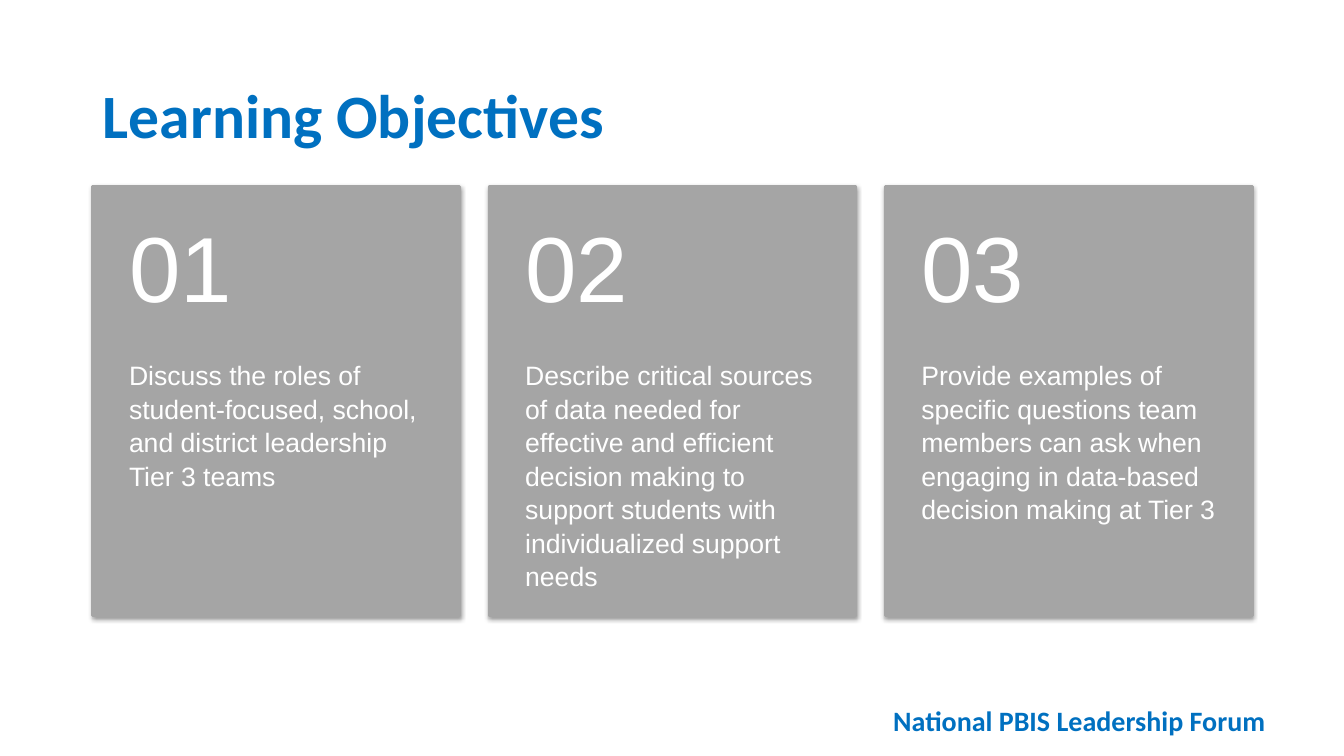
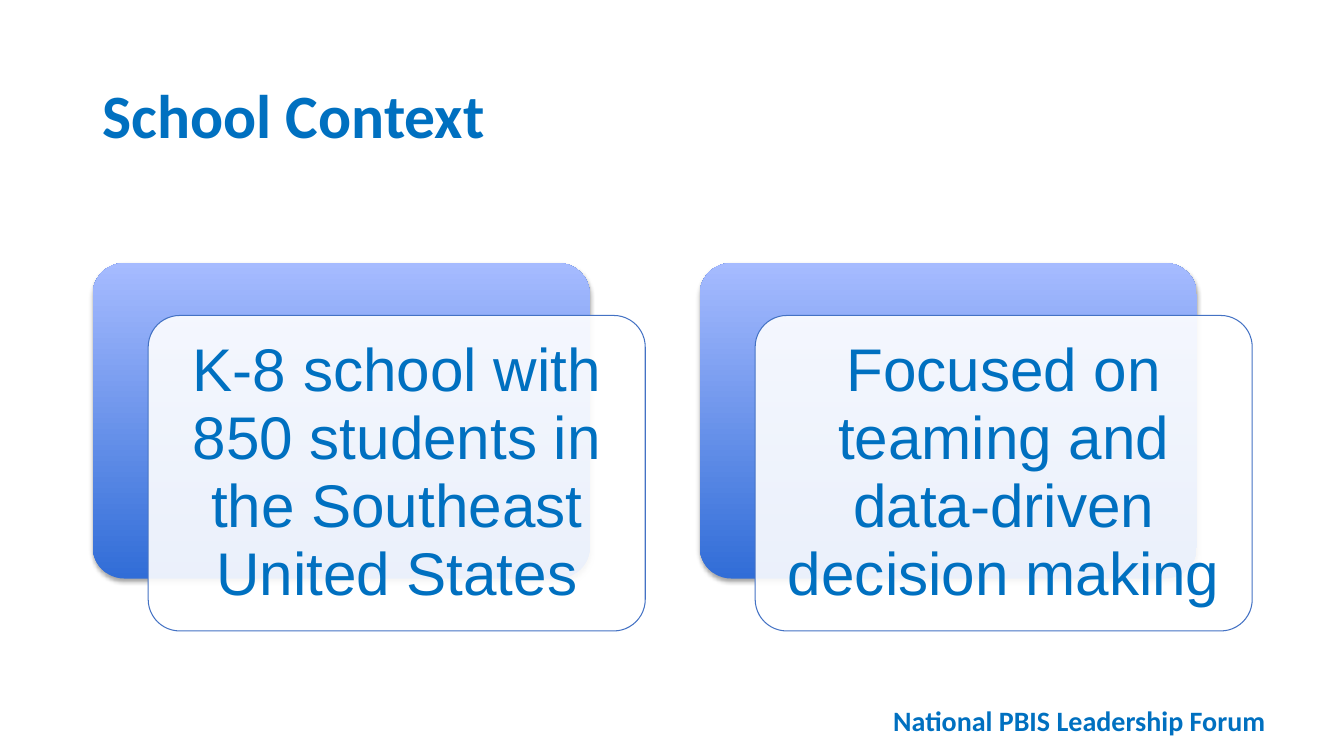
from lxml import etree
from pptx import Presentation, util as u
from pptx.dml.color import RGBColor
from pptx.enum import shapes, text
from pptx.oxml.ns import qn

COLORS = {"blue": "0070C0", "gray": "A5A5A5", "white": "FFFFFF",
          "outline": "4472C4", "deep": "316DD7", "pale": "A6BBFF"}

deck = Presentation()
deck.slide_width, deck.slide_height = u.Inches(13.33), u.Inches(7.5)
layout = deck.slide_layouts[5]

# Shared grid, in inches
LEFT, WIDTH = 0.92, 11.5
TITLE_TOP, TITLE_HEIGHT = 0.4, 1.45


def write(shape, words, size, color="blue", font="Arial", bold=False, align="LEFT",
          anchor="TOP", spacing=1.0, insets=(0.1, 0.05, 0.1, 0.05)):
    """Fill a shape with one formatted paragraph."""
    frame = shape.text_frame
    frame.word_wrap, frame.auto_size = True, text.MSO_AUTO_SIZE.NONE
    frame.vertical_anchor = text.MSO_ANCHOR[anchor]
    (frame.margin_left, frame.margin_top,
     frame.margin_right, frame.margin_bottom) = map(u.Inches, insets)
    frame.text = words
    paragraph = frame.paragraphs[0]
    paragraph.alignment, paragraph.line_spacing = text.PP_ALIGN[align], spacing
    style = paragraph.runs[0].font
    style.name, style.size, style.bold = font, u.Pt(size), bold
    style.color.rgb = RGBColor.from_string(COLORS[color])


def cast_shadow(shape, opacity, distance):
    """Add a soft black shadow below a shape."""
    shape.shadow.inherit = False
    effects = shape._element.spPr.find(qn("a:effectLst"))
    shadow = etree.SubElement(effects, qn("a:outerShdw"), blurRad=str(u.Pt(3.1)),
                              dist=str(u.Pt(distance)), dir="5400000", rotWithShape="0")
    black = etree.SubElement(shadow, qn("a:srgbClr"), val="000000")
    etree.SubElement(black, qn("a:alpha"), val=str(opacity * 1000))


# Slides and titles
slides = []
for heading in ("Learning Objectives", "School Context"):
    slide = deck.slides.add_slide(layout)
    title = slide.shapes.title
    title.left, title.top = u.Inches(LEFT), u.Inches(TITLE_TOP)
    title.width, title.height = u.Inches(WIDTH), u.Inches(TITLE_HEIGHT)
    write(title, heading, 44, font="Calibri", bold=True, anchor="MIDDLE")
    slides.append(slide)
objectives_slide, context_slide = slides

# Footer, moved to the layout so that every slide shows it
footer = objectives_slide.shapes.add_textbox(*map(u.Inches, (8.38, 6.93, 4.65, 0.44)))
write(footer, "National PBIS Leadership Forum", 20, font="Calibri", bold=True, align="CENTER")
layout.shapes.element.append(footer._element)

# Learning objectives: three numbered cards
objectives = (
    "Discuss the roles of student-focused, school, and district leadership Tier 3 teams",
    "Describe critical sources of data needed for effective and efficient decision making "
    "to support students with individualized support needs",
    "Provide examples of specific questions team members can ask when engaging in "
    "data-based decision making at Tier 3",
)
CARD_WIDTH, CARD_HEIGHT, NUMBER_HEIGHT = 3.64, 4.26, 1.7
card_top = TITLE_TOP + TITLE_HEIGHT
card_step = (WIDTH - CARD_WIDTH) / (len(objectives) - 1)
for index, objective in enumerate(objectives):
    x = LEFT + index * card_step
    card = objectives_slide.shapes.add_shape(
        shapes.MSO_SHAPE.RECTANGLE, *map(u.Inches, (x, card_top, CARD_WIDTH, CARD_HEIGHT)))
    card.fill.solid()
    card.fill.fore_color.rgb = RGBColor.from_string(COLORS["gray"])
    card.line.color.rgb = RGBColor.from_string(COLORS["gray"])
    card.line.width = u.Pt(2)
    cast_shadow(card, 38, 1.6)

    number = objectives_slide.shapes.add_textbox(
        *map(u.Inches, (x, card_top, CARD_WIDTH, NUMBER_HEIGHT)))
    write(number, f"{index + 1:02}", 66, "white", anchor="MIDDLE", spacing=0.9,
          insets=(0.36, 0.18, 0.36, 0.18))
    goal = objectives_slide.shapes.add_textbox(
        *map(u.Inches, (x, card_top + NUMBER_HEIGHT, CARD_WIDTH, CARD_HEIGHT - NUMBER_HEIGHT)))
    write(goal, objective, 19, "white", spacing=1.05, insets=(0.36, 0, 0.36, 0.36))

# School context: two panels, each in front of a gradient backdrop
facts = ("K-8 school with 850 students in the Southeast United States",
         "Focused on teaming and data-driven decision making")
PANEL_WIDTH, PANEL_HEIGHT, PANEL_TOP = 4.93, 3.13, 2.61
SHIFT_X, SHIFT_Y = 0.55, 0.52
panel_step = WIDTH - PANEL_WIDTH - SHIFT_X
for index, fact in enumerate(facts):
    x = LEFT + index * panel_step
    backdrop, panel = [
        context_slide.shapes.add_shape(
            shapes.MSO_SHAPE.ROUNDED_RECTANGLE,
            *map(u.Inches, (x + layer * SHIFT_X, PANEL_TOP + layer * SHIFT_Y,
                            PANEL_WIDTH, PANEL_HEIGHT)))
        for layer in range(2)]
    for layer in (backdrop, panel):
        layer.adjustments[0] = 0.1

    backdrop.fill.gradient()
    backdrop.fill.gradient_angle = 90
    for stop, shade in zip(backdrop.fill.gradient_stops, ("deep", "pale")):
        stop.color.rgb = RGBColor.from_string(COLORS[shade])
    backdrop.line.fill.background()
    cast_shadow(backdrop, 35, 1.8)

    panel.shadow.inherit = False
    panel.fill.solid()
    panel.fill.fore_color.rgb = RGBColor.from_string(COLORS["white"])
    tint = panel._element.spPr.find(qn("a:solidFill")).find(qn("a:srgbClr"))
    etree.SubElement(tint, qn("a:alpha"), val="90000")
    panel.line.color.rgb = RGBColor.from_string(COLORS["outline"])
    panel.line.width = u.Pt(0.75)
    write(panel, fact, 43, align="CENTER", anchor="MIDDLE", spacing=0.94, insets=(0.18,) * 4)

deck.save("out.pptx")
